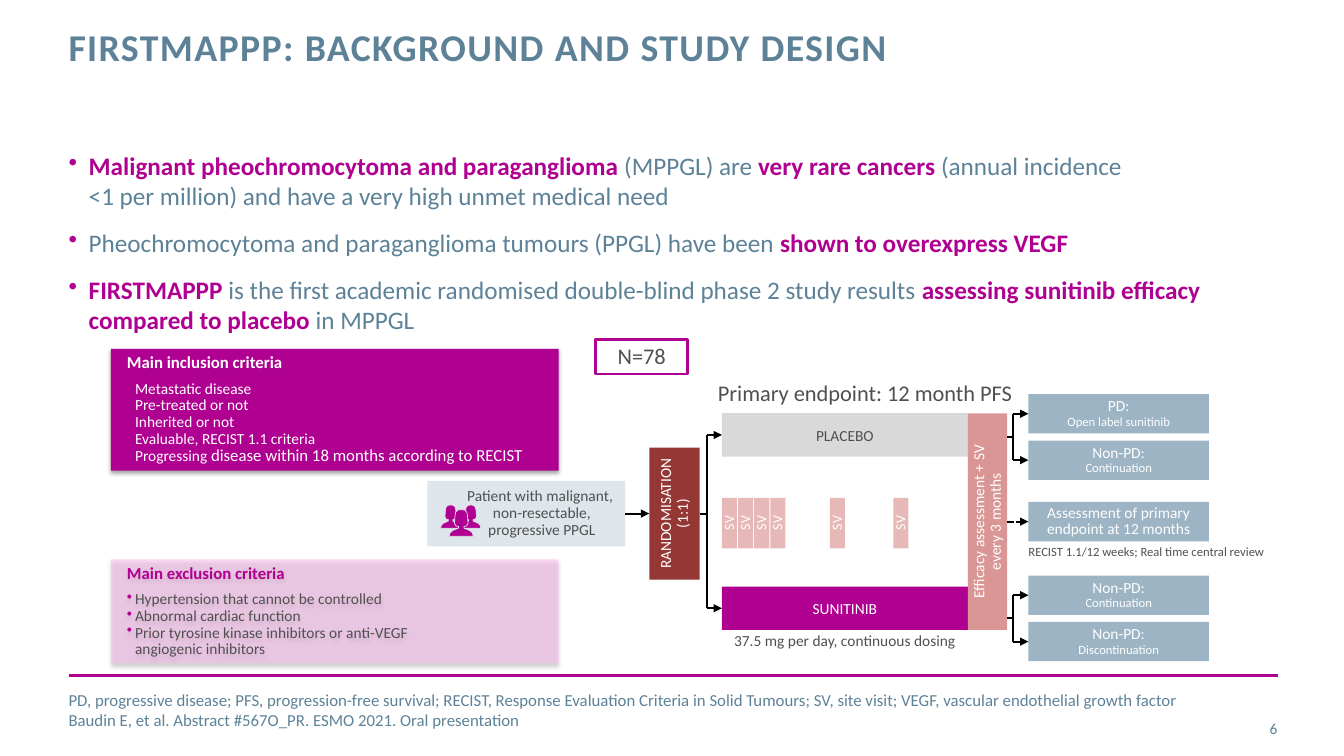
import pptx
import pptx.util
import pptx.dml.color
import pptx.enum.dml
import pptx.enum.shapes
import pptx.enum.text
import pptx.oxml
import pptx.oxml.ns

WIDTH, HEIGHT = 13.33, 7.5
ROWS = 75
CELL = HEIGHT / ROWS
FONT = "Calibri"
COLORS = {
    "magenta": "B00091", "slate": "5D8298", "text": "505050", "white": "FFFFFF",
    "outcome": "9CB4C3", "assessment": "D99694", "visit": "E6B9B8", "placebo": "D9D9D9",
    "randomisation": "953735", "patient": "DEE6EB", "pink": "FFBCF3", "black": "000000",
}
ALIGN = pptx.enum.text.PP_ALIGN
ANCHOR = pptx.enum.text.MSO_ANCHOR
STRONG = {"color": "magenta", "bold": True}
PLAIN = {}


def cells(count):
    return pptx.util.Inches(count * CELL)


def rgb(name):
    return pptx.dml.color.RGBColor.from_string(COLORS[name])


def add_xml(parent, tag, content="", attributes=""):
    namespace = pptx.oxml.ns.nsdecls("a")
    element = pptx.oxml.parse_xml(f"<a:{tag} {namespace} {attributes}>{content}</a:{tag}>")
    parent.append(element)


def write(frame, text, size=11, color="text", bold=False, align=ALIGN.CENTER,
          spacing=0.9, before=0, after=0, bullet=0, tracking=0):
    first = not frame.paragraphs[0].runs
    paragraph = frame.paragraphs[0] if first else frame.add_paragraph()
    if bullet:
        properties = paragraph._p.get_or_add_pPr()
        indent = cells(bullet)
        properties.set("marL", str(indent))
        properties.set("indent", str(-indent))
        add_xml(properties, "buClr", f'<a:srgbClr val="{COLORS["magenta"]}"/>')
        add_xml(properties, "buChar", attributes='char="•"')
    paragraph.alignment = align
    paragraph.line_spacing = spacing
    paragraph.space_before = pptx.util.Pt(0 if first else before)
    paragraph.space_after = pptx.util.Pt(after)
    for content, changes in [(text, PLAIN)] if isinstance(text, str) else text:
        style = {"size": size, "color": color, "bold": bold, **changes}
        for index, line in enumerate(content.split("\n")):
            if index:
                paragraph.add_line_break()
            run = paragraph.add_run()
            run.text = line
            run.font.name = FONT
            run.font.size = pptx.util.Pt(style["size"])
            run.font.bold = style["bold"]
            run.font.color.rgb = rgb(style["color"])
            if tracking:
                run._r.get_or_add_rPr().set("spc", str(tracking * 100))


def prepare(shape, margins=(0, 0, 0, 0), anchor=ANCHOR.MIDDLE, vertical=False):
    frame = shape.text_frame
    frame.word_wrap = True
    frame.vertical_anchor = anchor
    sides = [cells(margin) for margin in margins]
    frame.margin_left, frame.margin_top, frame.margin_right, frame.margin_bottom = sides
    if vertical:
        frame._txBody.bodyPr.set("vert", "vert270")
    return frame


def add_text_box(slide, box, anchor=ANCHOR.TOP):
    return prepare(slide.shapes.add_textbox(*map(cells, box)), anchor=anchor)


def add_rectangle(slide, box, fill=None, line=None):
    kind = pptx.enum.shapes.MSO_SHAPE.RECTANGLE
    shape = slide.shapes.add_shape(kind, *map(cells, box))
    shape.shadow.inherit = False
    if fill:
        shape.fill.solid()
        shape.fill.fore_color.rgb = rgb(fill)
    else:
        shape.fill.background()
    if line:
        shape.line.color.rgb = rgb(line)
        shape.line.width = pptx.util.Pt(2)
    else:
        shape.line.fill.background()
    return shape


def add_line(slide, start, end, color="black", width=1.5, arrow=False, dashed=False,
             source=None, target=None):
    kind = pptx.enum.shapes.MSO_CONNECTOR.STRAIGHT
    connector = slide.shapes.add_connector(kind, *map(cells, (*start, *end)))
    if source:
        connector.begin_connect(source, 3)
    if target:
        connector.end_connect(target, 1)
    connector.line.color.rgb = rgb(color)
    connector.line.width = pptx.util.Pt(width)
    if dashed:
        connector.line.dash_style = pptx.enum.dml.MSO_LINE.SQUARE_DOT
    if arrow:
        add_xml(connector.line._get_or_add_ln(), "tailEnd", attributes='type="triangle"')
    add_xml(connector._element.spPr, "effectLst")


def add_bracket(slide, start, trunk, targets, source=None):
    heights = [(target.top + target.height / 2) / cells(1) for target in targets]
    add_line(slide, start, (trunk, start[1]), source=source)
    add_line(slide, (trunk, heights[0]), (trunk, heights[-1]))
    for target, height in zip(targets, heights):
        add_line(slide, (trunk, height), (trunk + 1.5, height), arrow=True, target=target)


def add_header(slide, box):
    write(add_text_box(slide, box), "FIRSTMAPPP: BACKGROUND AND STUDY DESIGN", size=27,
          color="slate", bold=True, align=ALIGN.LEFT, spacing=pptx.util.Pt(30), tracking=1)


def add_background(slide, box):
    statements = [
        [("Malignant pheochromocytoma and paraganglioma ", STRONG), ("(MPPGL) are ", PLAIN),
         ("very rare cancers ", STRONG),
         ("(annual incidence \n<1 per million) and have a very high unmet medical need", PLAIN)],
        [("Pheochromocytoma and paraganglioma tumours (PPGL) have been ", PLAIN),
         ("shown to overexpress VEGF", STRONG)],
        [("FIRSTMAPPP", STRONG),
         (" is the first academic randomised double-blind phase 2 study results ", PLAIN),
         ("assessing sunitinib efficacy compared to placebo ", STRONG), ("in MPPGL", PLAIN)],
    ]
    frame = add_text_box(slide, box)
    for statement in statements:
        write(frame, statement, size=18, color="slate", align=ALIGN.LEFT, spacing=1,
              before=12, bullet=2)


def add_criteria(slide, box, heading, items, fill, heading_color, item_color,
                 right_margin, alpha=None):
    panel = add_rectangle(slide, box, fill)
    properties = panel._element.spPr
    if alpha:
        color = properties.find(".//" + pptx.oxml.ns.qn("a:srgbClr"))
        add_xml(color, "alpha", attributes=f'val="{alpha * 1000}"')
    shadow = ('<a:outerShdw blurRad="39370" dist="22860" dir="5400000" rotWithShape="0">'
              '<a:srgbClr val="000000"><a:alpha val="35000"/></a:srgbClr></a:outerShdw>')
    properties.remove(properties.find(pptx.oxml.ns.qn("a:effectLst")))
    add_xml(properties, "effectLst", shadow)
    frame = prepare(panel, (1.6, 0.55, right_margin, 0), ANCHOR.TOP)
    write(frame, heading, size=12, color=heading_color, bold=True, align=ALIGN.LEFT)
    for index, item in enumerate(items):
        write(frame, item, color=item_color, align=ALIGN.LEFT, bullet=0.8,
              before=0 if index else 6)


def add_person(slide, box):
    left, top, width, height = box
    half = [(0, 0), (0.14, 0.02), (0.23, 0.1), (0.26, 0.25), (0.28, 0.52), (0.22, 0.61),
            (0.11, 0.64), (0.12, 0.7), (0.34, 0.78), (0.46, 0.87), (0.5, 1)]
    outline = half + [(-x, y) for x, y in reversed(half)]
    points = [(cells(left + width * (0.5 + x)), cells(top + height * y)) for x, y in outline]
    builder = slide.shapes.build_freeform(*points[0])
    builder.add_line_segments(points[1:], close=True)
    person = builder.convert_to_shape()
    person.shadow.inherit = False
    person.fill.solid()
    person.fill.fore_color.rgb = rgb("magenta")
    person.line.color.rgb = rgb("patient")
    person.line.width = pptx.util.Pt(0.5)


def add_patient(slide, box):
    left, top, width, height = box
    patient = add_rectangle(slide, box, "patient")
    write(prepare(patient, (3.1, 0, 0, 0)),
          "Patient with malignant, \nnon-resectable,\nprogressive PPGL")
    for x, y, w, h in [(1.3, 2.4, 2, 2.3), (3.3, 2.4, 2, 2.3), (2.15, 2.85, 2.4, 2.65)]:
        add_person(slide, (left + x, top + y, w, h))
    return patient


def add_arms(slide, box):
    left, top, width, height = box
    arms = []
    for name, fill, color, offset in [("PLACEBO", "placebo", "text", 0),
                                      ("SUNITINIB", "magenta", "white", height - 4.3)]:
        arm = add_rectangle(slide, (left, top + offset, width, 4.3), fill)
        write(prepare(arm, (0, 0.3, 0, 0)), name, color=color)
        arms.append(arm)
    for offset in (0, 1.6, 3.2, 4.8, 10.7, 17):
        visit = add_rectangle(slide, (left + offset, top + 8.4, 1.5, 5), "visit")
        write(prepare(visit, vertical=True), "SV", size=10, color="white")
    write(add_text_box(slide, (left - 1, top - 3.1, width + 6, 3)),
          "Primary endpoint: 12 month PFS", size=16)
    write(add_text_box(slide, (left, top + height + 0.3, width, 2)),
          "37.5 mg per day, continuous dosing")
    return arms


def add_outcomes(slide, box, assessment):
    left, top, width, height = box
    labels = [(0, "PD:", "Open label sunitinib"), (4.6, "Non-PD:", "Continuation"),
              (10.7, "Assessment of primary\nendpoint at 12 months", ""),
              (18, "Non-PD:", "Continuation"), (22.6, "Non-PD:", "Discontinuation")]
    outcomes = []
    for offset, heading, detail in labels:
        outcome = add_rectangle(slide, (left, top + offset, width, 3.9), "outcome")
        frame = prepare(outcome)
        write(frame, heading, color="white")
        if detail:
            write(frame, detail, size=9, color="white")
        outcomes.append(outcome)
    write(add_text_box(slide, (left, top + 15, width + 8, 1.6)),
          "RECIST 1.1/12 weeks; Real time central review", size=9, align=ALIGN.LEFT)
    for pair in (outcomes[:2], outcomes[3:]):
        middle = (pair[0].top + pair[1].top + pair[0].height) / 2 / cells(1)
        add_bracket(slide, (left - 2.1, middle), left - 1.5, pair)
    add_line(slide, (left - 2.1, top + 12.7), (left, top + 12.7), arrow=True, dashed=True,
             source=assessment, target=outcomes[2])


def add_study_design(slide, box):
    left, top, width, height = box
    size_label = add_rectangle(slide, (left + 16.7, top, 9.1, 3.4), line="magenta")
    write(prepare(size_label), "N=78", size=16)
    patient = add_patient(slide, (left, top + 14, 19.6, 6.5))
    randomisation = add_rectangle(slide, (left + 22, top + 10.7, 5, 13.1), "randomisation")
    write(prepare(randomisation, vertical=True), "RANDOMISATION\n(1:1)", color="white")
    add_line(slide, (left + 19.6, top + 17.3), (left + 22, top + 17.3), arrow=True,
             source=patient, target=randomisation)
    arms = add_arms(slide, (left + 29.2, top + 7.3, 24.4, 21.5))
    add_bracket(slide, (left + 27, top + 17.25), left + 27.7, arms, source=randomisation)
    assessment = add_rectangle(slide, (left + 53.6, top + 7.3, 3.9, 21.5), "assessment")
    write(prepare(assessment, vertical=True), "Efficacy assessment + SV\nevery 3 months",
          color="white")
    add_outcomes(slide, (left + 59.6, top + 5.4, 17.9, 26.5), assessment)


def add_footer(slide, box):
    left, top, width, height = box
    add_line(slide, (left, top), (left + width, top), color="magenta", width=2)
    notes = ("PD, progressive disease; PFS, progression-free survival; RECIST, Response "
             "Evaluation Criteria in Solid Tumours; SV, site visit; VEGF, vascular "
             "endothelial growth factor \n"
             "Baudin E, et al. Abstract #567O_PR. ESMO 2021. Oral presentation")
    write(add_text_box(slide, (left, top + 2, width - 2.7, 2.8), ANCHOR.MIDDLE), notes,
          size=12, color="slate", align=ALIGN.LEFT, spacing=1)
    write(add_text_box(slide, (left + width - 8.7, top + 3.3, 8.6, 4), ANCHOR.MIDDLE), "6",
          color="slate", align=ALIGN.RIGHT, spacing=1)


def main():
    presentation = pptx.Presentation()
    presentation.slide_width = pptx.util.Inches(WIDTH)
    presentation.slide_height = pptx.util.Inches(HEIGHT)
    slide = presentation.slides.add_slide(presentation.slide_layouts[6])
    add_header(slide, (6.8, 2.7, 95.6, 8.8))
    add_background(slide, (6.8, 14.9, 119.1, 19.7))
    add_criteria(slide, (11, 34.6, 44.4, 12.1), "Main inclusion criteria",
                 ["Metastatic disease", "Pre-treated or not", "Inherited or not",
                  "Evaluable, RECIST 1.1 criteria",
                  [("Progressing ", PLAIN),
                   ("disease within 18 months according to RECIST", {"size": 12})]],
                 "magenta", "white", "white", 3)
    add_criteria(slide, (11, 55.5, 44.4, 10.3), "Main exclusion criteria",
                 ["Hypertension that cannot be controlled", "Abnormal cardiac function",
                  "Prior tyrosine kinase inhibitors or anti-VEGF angiogenic inhibitors"],
                 "pink", "magenta", "text", 12.4, alpha=50)
    add_study_design(slide, (42.4, 33.7, 77.5, 31.9))
    add_footer(slide, (6.8, 67, 120, 8))
    presentation.save("out.pptx")


if __name__ == "__main__":
    main()
